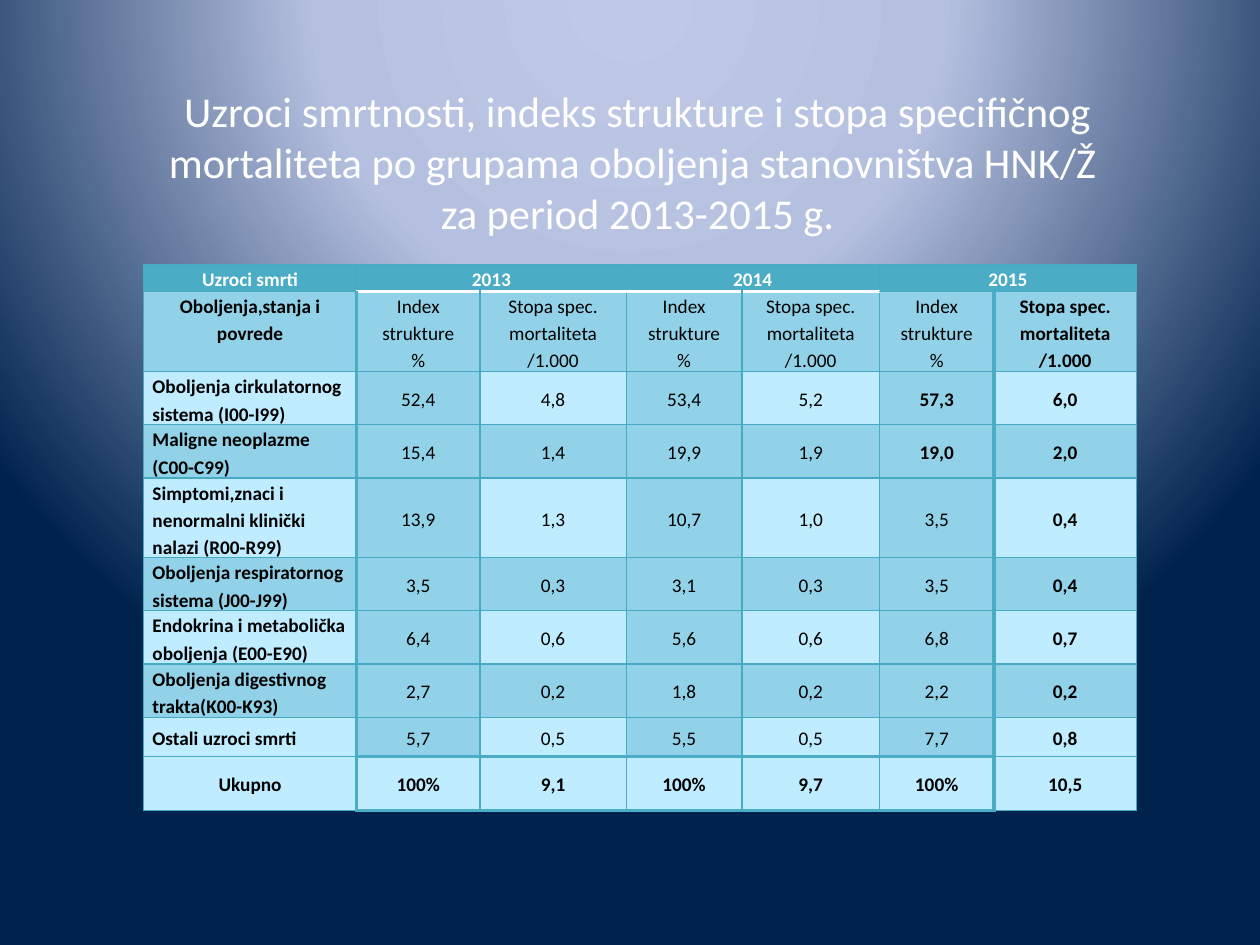
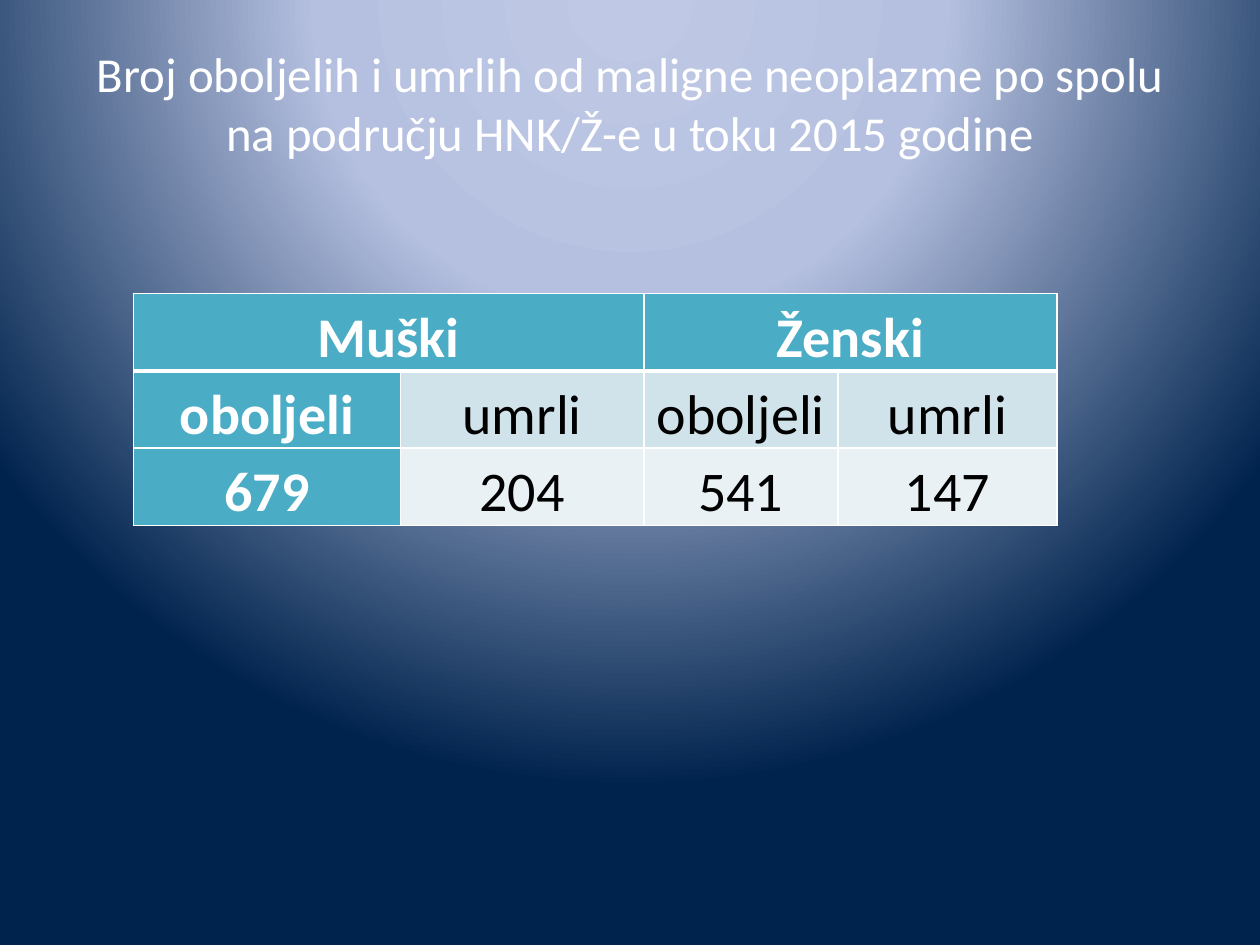
from lxml import etree
from pptx import Presentation
from pptx.dml.color import RGBColor
from pptx.enum.text import MSO_ANCHOR as Anchor, PP_ALIGN as Align
from pptx.oxml import parse_xml
from pptx.oxml.ns import nsdecls, qn
from pptx.util import Inches, Pt

FONT = "Calibri"
WHITE = RGBColor(0xFF, 0xFF, 0xFF)
BLACK = RGBColor(0x00, 0x00, 0x00)
TEAL = RGBColor(0x4B, 0xAC, 0xC6)
GRID_TEAL = RGBColor(0x46, 0xAA, 0xC5)
LIGHT_BLUE = RGBColor(0xBF, 0xEC, 0xFF)
BAND_BLUE = RGBColor(0x91, 0xD2, 0xE8)
PALE_DARK = RGBColor(0xD0, 0xE3, 0xEA)
PALE_LIGHT = RGBColor(0xE9, 0xF1, 0xF5)
BACKGROUND_STOPS = [
    (0, RGBColor(0xBF, 0xC9, 0xE5)),
    (40, RGBColor(0xB5, 0xC0, 0xE0)),
    (100, RGBColor(0x00, 0x23, 0x4D)),
]

CAUSES_TITLE = (
    "Uzroci smrtnosti, indeks strukture i stopa specifičnog mortaliteta "
    "po grupama oboljenja stanovništva HNK/Ž \vza period 2013-2015 g."
)
INDEX, RATE = "Index strukture\n%", "Stopa spec. mortaliteta /1.000"
CAUSES = [
    ["Uzroci smrti", "2013", "", "2014", "", "2015", ""],
    ["Oboljenja,stanja i povrede"] + [INDEX, RATE] * 3,
    ["Oboljenja cirkulatornog sistema (I00-I99)", "52,4", "4,8", "53,4", "5,2", "57,3", "6,0"],
    ["Maligne neoplazme\n(C00-C99)", "15,4", "1,4", "19,9", "1,9", "19,0", "2,0"],
    ["Simptomi,znaci i nenormalni klinički nalazi (R00-R99)",
     "13,9", "1,3", "10,7", "1,0", "3,5", "0,4"],
    ["Oboljenja respiratornog sistema (J00-J99)", "3,5", "0,3", "3,1", "0,3", "3,5", "0,4"],
    ["Endokrina i metabolička oboljenja (E00-E90)", "6,4", "0,6", "5,6", "0,6", "6,8", "0,7"],
    ["Oboljenja digestivnog trakta(K00-K93)", "2,7", "0,2", "1,8", "0,2", "2,2", "0,2"],
    ["Ostali uzroci smrti", "5,7", "0,5", "5,5", "0,5", "7,7", "0,8"],
    ["Ukupno", "100%", "9,1", "100%", "9,7", "100%", "10,5"],
]
CAUSE_COLUMNS = [1.69, 0.98, 1.16, 0.92, 1.09, 0.91, 1.13]
CAUSE_ROWS = [0.2, 0.64, 0.41, 0.41, 0.63, 0.41, 0.41, 0.41, 0.31, 0.43]
TOTAL_ROW = len(CAUSES) - 1
LAST_COLUMN = len(CAUSE_COLUMNS) - 1
HIGHLIGHTS = {"57,3", "19,0"}

SEX_TITLE = (
    "Broj oboljelih i umrlih od maligne neoplazme po spolu "
    "na području HNK/Ž-e u toku 2015 godine"
)
SEX_COUNTS = [
    ["Muški", "", "Ženski", ""],
    ["oboljeli", "umrli", "oboljeli", "umrli"],
    ["679", "204", "541", "147"],
]
SEX_COLUMNS = [2.12, 1.93, 1.54, 1.74]
SEX_ROWS = [0.39] * 3


def cause_style(row, column):
    """Return fill, font colour, bold, alignment and anchor of a cell."""
    label = column == 0 and 1 < row < TOTAL_ROW
    bold = (row in (0, TOTAL_ROW) or column in (0, LAST_COLUMN)
            or CAUSES[row][column] in HIGHLIGHTS)
    banded = row < TOTAL_ROW and (row % 2 == 1 or column % 2 == 1)
    fill = TEAL if row == 0 else BAND_BLUE if banded else LIGHT_BLUE
    return (fill, WHITE if row == 0 else BLACK, bold,
            Align.LEFT if label else Align.CENTER,
            Anchor.TOP if row < 2 else Anchor.MIDDLE)


def cause_line(direction, line, position):
    """Return colour and width of one stretch of a grid line."""
    if direction == "vertical":
        heavy = line in (1, LAST_COLUMN) and position > 0
    else:
        if line == 1 and 1 <= position <= 4:
            return WHITE, 2
        heavy = line >= TOTAL_ROW and 1 <= position < LAST_COLUMN
    return (TEAL, 2) if heavy else (GRID_TEAL, 0.75)


def sex_style(row, column):
    header = row == 0 or column == 0
    fill = TEAL if header else PALE_DARK if row == 1 else PALE_LIGHT
    return fill, WHITE if header else BLACK, header, Align.CENTER, Anchor.MIDDLE


def sex_line(direction, line, position):
    return WHITE, 3 if direction == "horizontal" and line == 1 else 1


def set_background(master):
    """Give every slide the radial glow that starts above the top edge."""
    master.background.fill.gradient()
    gradient = master.element.find(".//" + qn("p:bg")).find(".//" + qn("a:gradFill"))
    for child in list(gradient):
        gradient.remove(child)
    stops = "".join(
        f'<a:gs pos="{share * 1000}"><a:srgbClr val="{color}"/></a:gs>'
        for share, color in BACKGROUND_STOPS
    )
    gradient.append(parse_xml(f'<a:gsLst {nsdecls("a")}>{stops}</a:gsLst>'))
    gradient.append(parse_xml(
        f'<a:path {nsdecls("a")} path="circle">'
        '<a:fillToRect l="50000" t="-80000" r="50000" b="180000"/></a:path>'
    ))


def format_text(text_frame, size, color, bold, align, spacing):
    for paragraph in text_frame.paragraphs:
        paragraph.alignment = align
        paragraph.line_spacing = spacing
        for run in paragraph.runs:
            run.font.name = FONT
            run.font.size = Pt(size)
            run.font.bold = bold
            run.font.color.rgb = color


def add_title(slide, text, box, size, anchor):
    text_frame = slide.shapes.add_textbox(*map(Inches, box)).text_frame
    text_frame.word_wrap = True
    text_frame.vertical_anchor = anchor
    text_frame.text = text
    format_text(text_frame, size, WHITE, False, Align.CENTER, 1.0)


def set_border(cell, side, color, width):
    properties = cell._tc.get_or_add_tcPr()
    line = etree.SubElement(properties, qn(f"a:ln{side}"), w=str(Pt(width)))
    fill = etree.SubElement(line, qn("a:solidFill"))
    etree.SubElement(fill, qn("a:srgbClr"), val=str(color))


def add_grid(slide, content, left, top, columns, rows, size, style, line, merges):
    """Add a table; style and line give the look of each cell and grid line."""
    table = slide.shapes.add_table(
        len(rows), len(columns), Inches(left), Inches(top),
        Inches(sum(columns)), Inches(sum(rows))
    ).table
    table.first_row = table.horz_banding = False
    for column, width in zip(table.columns, columns):
        column.width = Inches(width)
    for row, height in zip(table.rows, rows):
        row.height = Inches(height)
    for r, texts in enumerate(content):
        for c, text in enumerate(texts):
            cell = table.cell(r, c)
            fill, color, bold, align, anchor = style(r, c)
            set_border(cell, "L", *line("vertical", c, r))
            set_border(cell, "R", *line("vertical", c + 1, r))
            set_border(cell, "T", *line("horizontal", r, c))
            set_border(cell, "B", *line("horizontal", r + 1, c))
            cell.fill.solid()
            cell.fill.fore_color.rgb = fill
            cell.margin_left = cell.margin_right = Inches(0.07)
            cell.margin_top = cell.margin_bottom = 0
            cell.vertical_anchor = anchor
            cell.text_frame.text = text
            format_text(cell.text_frame, size, color, bold, align, 1.15)
    for first in merges:
        table.cell(0, first).merge(table.cell(0, first + 1))


def main():
    presentation = Presentation()
    presentation.slide_width, presentation.slide_height = Inches(10), Inches(7.5)
    set_background(presentation.slide_master)
    blank = presentation.slide_layouts[6]

    slide = presentation.slides.add_slide(blank)
    add_title(slide, CAUSES_TITLE, (0.71, 0.44, 8.7, 1.5), 24.3, Anchor.BOTTOM)
    add_grid(slide, CAUSES, 1.14, 2.1, CAUSE_COLUMNS, CAUSE_ROWS, 11,
             cause_style, cause_line, merges=(1, 3, 5))

    slide = presentation.slides.add_slide(blank)
    add_title(slide, SEX_TITLE, (0.5, 0.3, 9, 1.64), 27.9, Anchor.TOP)
    add_grid(slide, SEX_COUNTS, 1.06, 2.33, SEX_COLUMNS, SEX_ROWS, 32,
             sex_style, sex_line, merges=(0, 2))

    presentation.save("out.pptx")


if __name__ == "__main__":
    main()
